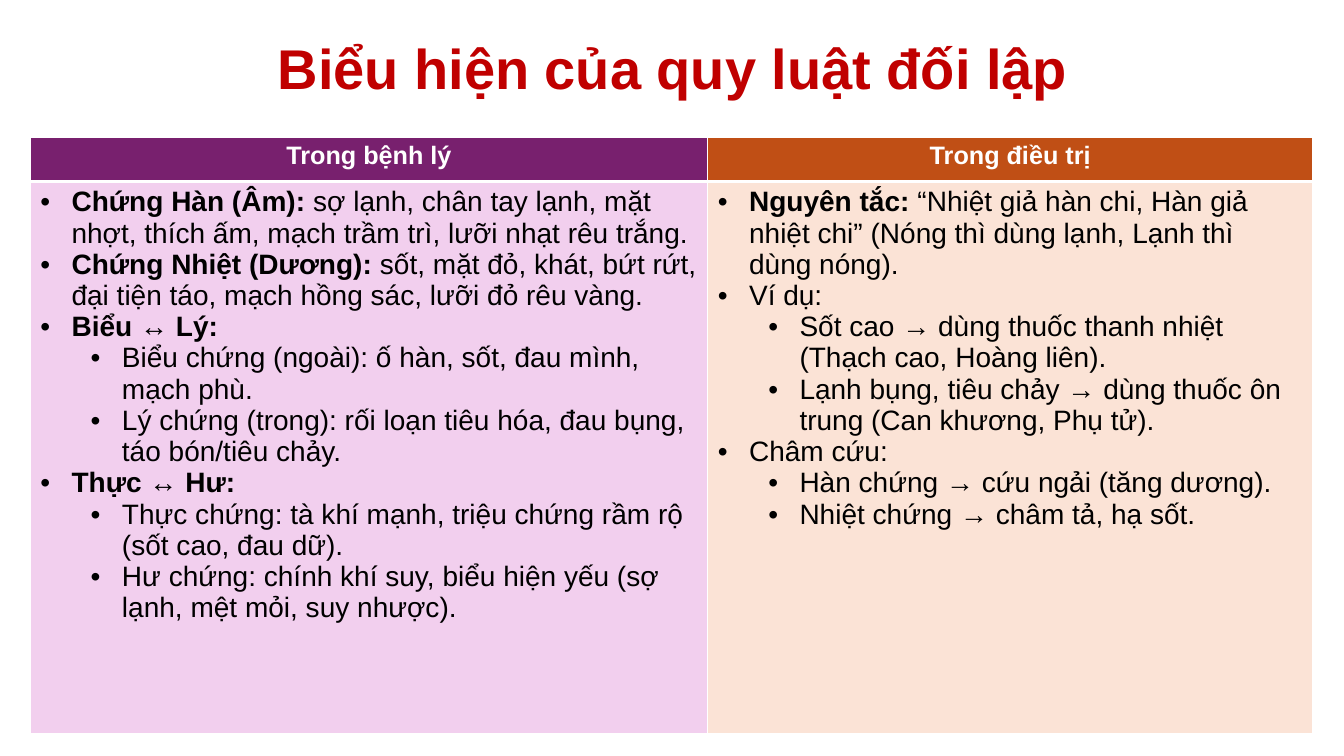
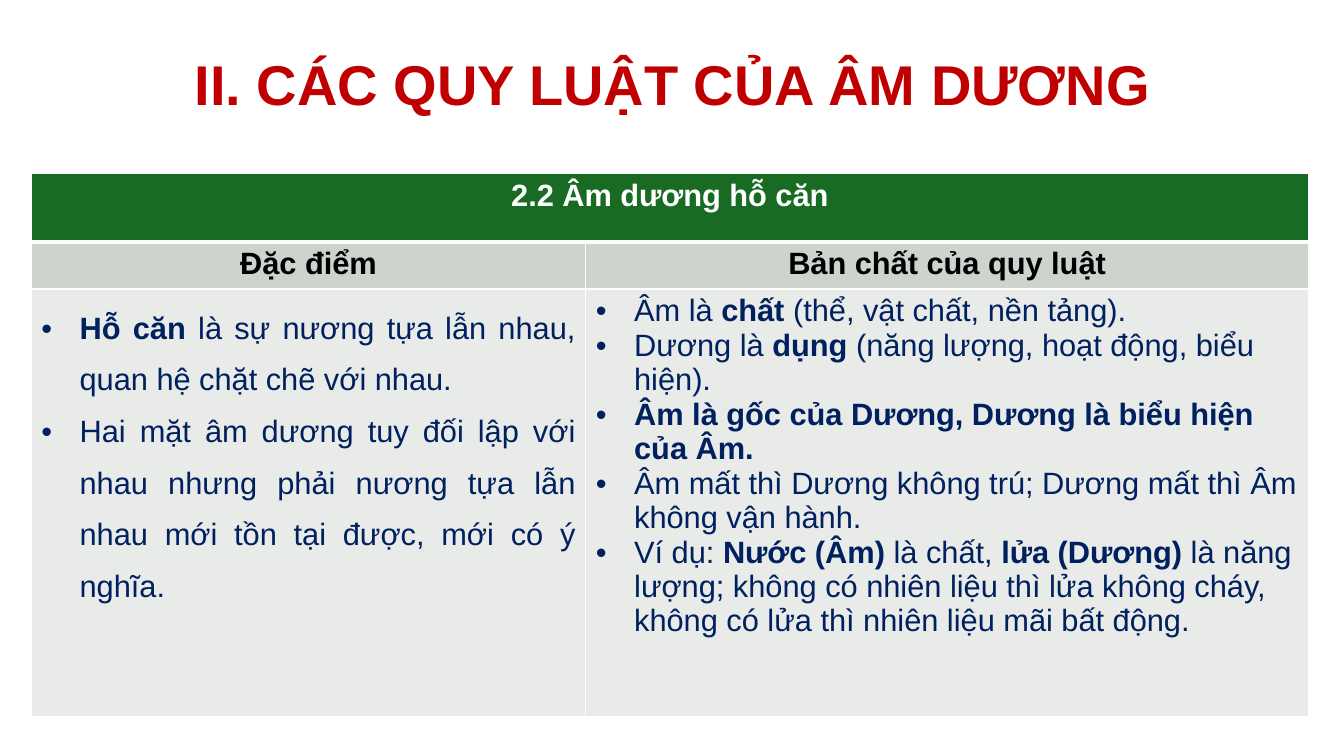
from lxml import etree
from pptx import Presentation
from pptx.dml.color import RGBColor
from pptx.enum.text import MSO_ANCHOR, PP_ALIGN
from pptx.oxml.ns import qn
from pptx.util import Inches, Pt

COLORS = {
    "title": "C00000", "white": "FFFFFF", "black": "000000", "navy": "002060",
    "purple": "78206E", "lilac": "F2CFEE", "orange": "C04F15", "peach": "FBE3D6",
    "green": "196B24", "sage": "CCD4CD", "mist": "E8EBE8",
}
FONT = "Arial"
HEADER_LINE, CELL_LINE = 3, 1
LEVEL_STEP = 0.5
TITLE = {"size": 40, "color": "title", "bold": True}

PATHOLOGY = [
    "*Chứng Hàn (Âm):* sợ lạnh, chân tay lạnh, mặt nhợt, thích ấm, mạch trầm trì, lưỡi nhạt rêu trắng.",
    "*Chứng Nhiệt (Dương):* sốt, mặt đỏ, khát, bứt rứt, đại tiện táo, mạch hồng sác, lưỡi đỏ rêu vàng.",
    "*Biểu ↔ Lý:*",
    "> Biểu chứng (ngoài): ố hàn, sốt, đau mình, mạch phù.",
    "> Lý chứng (trong): rối loạn tiêu hóa, đau bụng, táo bón/tiêu chảy.",
    "*Thực ↔ Hư:*",
    "> Thực chứng: tà khí mạnh, triệu chứng rầm rộ (sốt cao, đau dữ).",
    "> Hư chứng: chính khí suy, biểu hiện yếu (sợ lạnh, mệt mỏi, suy nhược).",
]
TREATMENT = [
    "*Nguyên tắc:* “Nhiệt giả hàn chi, Hàn giả nhiệt chi” (Nóng thì dùng lạnh, Lạnh thì dùng nóng).",
    "Ví dụ:",
    "> Sốt cao → dùng thuốc thanh nhiệt (Thạch cao, Hoàng liên).",
    "> Lạnh bụng, tiêu chảy → dùng thuốc ôn trung (Can khương, Phụ tử).",
    "Châm cứu:",
    "> Hàn chứng → cứu ngải (tăng dương).",
    "> Nhiệt chứng → châm tả, hạ sốt.",
]
FEATURES = [
    "*Hỗ căn* là sự nương tựa lẫn nhau, quan hệ chặt chẽ với nhau.",
    "Hai mặt âm dương tuy đối lập với nhau nhưng phải nương tựa lẫn nhau mới tồn tại được, mới có ý nghĩa.",
]
ESSENCE = [
    "Âm là *chất* (thể, vật chất, nền tảng).",
    "Dương là *dụng* (năng lượng, hoạt động, biểu hiện).",
    "*Âm là gốc của Dương, Dương là biểu hiện của Âm.*",
    "Âm mất thì Dương không trú; Dương mất thì Âm không vận hành.",
    "Ví dụ: *Nước (Âm)* là chất, *lửa (Dương)* là năng lượng; không có nhiên liệu "
    "thì lửa không cháy, không có lửa thì nhiên liệu mãi bất động.",
]


def rgb(name):
    return RGBColor.from_string(COLORS[name])


def add_run(p, text, size, color, bold=False):
    r = p.add_run()
    r.text = text
    r.font.color.rgb = rgb(color)
    for name, value in {"name": FONT, "size": Pt(size), "bold": bold}.items():
        setattr(r.font, name, value)


def add_title(s, text, top, height):
    tf = s.shapes.add_textbox(Inches(0.92), Inches(top), Inches(11.5), Inches(height)).text_frame
    for name, value in {"word_wrap": True, "vertical_anchor": MSO_ANCHOR.MIDDLE}.items():
        setattr(tf, name, value)
    p = tf.paragraphs[0]
    for name, value in {"alignment": PP_ALIGN.CENTER, "line_spacing": 0.9}.items():
        setattr(p, name, value)
    add_run(p, text, **TITLE)


def add_table(s, left, top, widths, heights):
    frame = s.shapes.add_table(len(heights), len(widths), Inches(left), Inches(top),
                               Inches(sum(widths)), Inches(sum(heights)))
    table = frame.table
    for name in ("first_row", "horz_banding"):
        setattr(table, name, False)
    for column, width in zip(table.columns, widths):
        column.width = Inches(width)
    for row, height in zip(table.rows, heights):
        row.height = Inches(height)
    return table


def paint_cell(table, row, col, fill):
    """Fill a cell and rule it in white, with a heavier rule under the top row."""
    cell = table.cell(row, col)
    tc_pr = cell._tc.get_or_add_tcPr()
    heavy = {0: "B", 1: "T"}.get(row)
    for side in "LRTB":
        width = HEADER_LINE if side == heavy else CELL_LINE
        ln = etree.SubElement(tc_pr, qn(f"a:ln{side}"), w=str(Pt(width)))
        solid = etree.SubElement(ln, qn("a:solidFill"))
        etree.SubElement(solid, qn("a:srgbClr"), val=COLORS["white"])
    cell.fill.solid()
    cell.fill.fore_color.rgb = rgb(fill)
    return cell


def add_heading(table, row, col, text, fill, size, color="white"):
    p = paint_cell(table, row, col, fill).text_frame.paragraphs[0]
    p.alignment = PP_ALIGN.CENTER
    add_run(p, text, size, color, bold=True)


def add_bullets(table, row, col, items, fill, size, color, indent, **paragraph_format):
    """Write bulleted items: *...* marks bold, a leading '> ' marks the second level."""
    tf = paint_cell(table, row, col, fill).text_frame
    for i, item in enumerate(items):
        p = tf.add_paragraph() if i else tf.paragraphs[0]
        p.level = int(item.startswith("> "))
        for name, value in paragraph_format.items():
            setattr(p, name, value)
        p_pr = p._p.get_or_add_pPr()
        p_pr.set("marL", str(Inches(indent + p.level * LEVEL_STEP)))
        p_pr.set("indent", str(-Inches(indent)))
        etree.SubElement(p_pr, qn("a:buFont"), typeface=FONT)
        etree.SubElement(p_pr, qn("a:buChar"), char="•")
        for j, text in enumerate(item.removeprefix("> ").split("*")):
            if text:
                add_run(p, text, size, color, bold=j % 2 == 1)


def build_opposition(s):
    table = add_table(s, 0.3, 1.36, [6.72, 6], [0.44, 5.48])
    columns = [("Trong bệnh lý", "purple", PATHOLOGY, "lilac"),
               ("Trong điều trị", "orange", TREATMENT, "peach")]
    for col, (heading, dark, items, light) in enumerate(columns):
        add_heading(table, 0, col, heading, dark, 18)
        add_bullets(table, 1, col, items, light, 20, "black", 0.31)
    add_title(s, "Biểu hiện của quy luật đối lập", 0.22, 0.98)


def build_interdependence(s):
    table = add_table(s, 0.31, 1.72, [5.5, 7.17], [0.68, 0.46, 4.24])
    table.cell(0, 0).merge(table.cell(0, 1))
    add_heading(table, 0, 0, "2.2 Âm dương hỗ căn", "green", 22)
    paint_cell(table, 0, 1, "green")
    justified = {"alignment": PP_ALIGN.JUSTIFY, "line_spacing": 1.5}
    columns = [("Đặc điểm", FEATURES, justified), ("Bản chất của quy luật", ESSENCE, {})]
    for col, (heading, items, paragraph_format) in enumerate(columns):
        add_heading(table, 1, col, heading, "sage", 22, "black")
        add_bullets(table, 2, col, items, "mist", 22, "navy", 0.38, **paragraph_format)
    add_title(s, "II. CÁC QUY LUẬT CỦA ÂM DƯƠNG", 0.14, 1.45)


def main():
    prs = Presentation()
    prs.slide_width, prs.slide_height = Inches(13.33), Inches(7.5)
    for build in (build_opposition, build_interdependence):
        build(prs.slides.add_slide(prs.slide_layouts[6]))
    prs.save("out.pptx")


if __name__ == "__main__":
    main()
